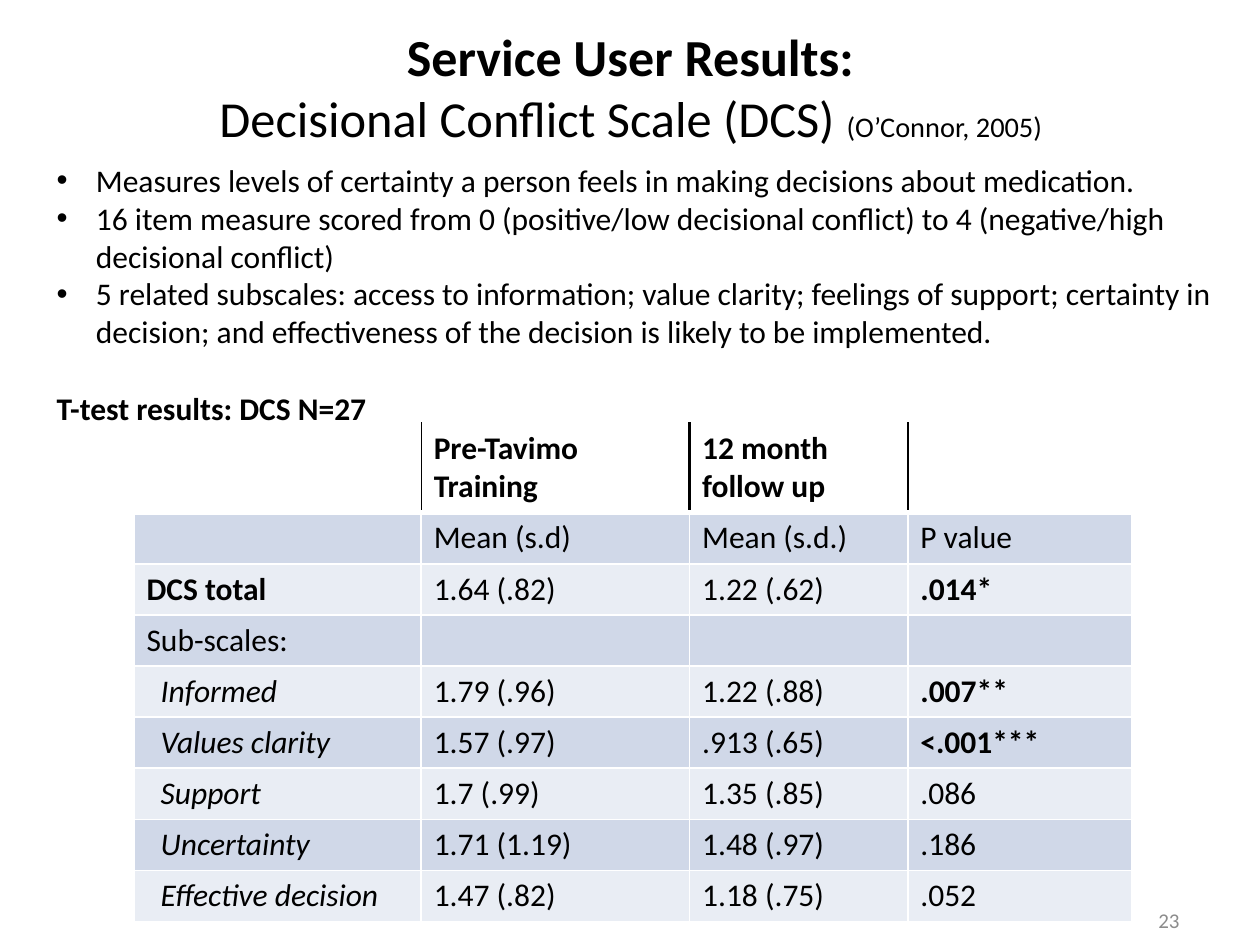
import pptx
import pptx.dml.color
import pptx.enum.text
import pptx.oxml
import pptx.oxml.ns
import pptx.util

Cm, Pt = pptx.util.Cm, pptx.util.Pt
RGB = pptx.dml.color.RGBColor.from_string
ALIGN = pptx.enum.text.PP_ALIGN
ANCHOR = pptx.enum.text.MSO_ANCHOR

# Content
TITLE = [
    [("Service User Results:", "title", True)],
    [("Decisional Conflict Scale (DCS) ", "subtitle", False),
     ("(O’Connor, 2005)", "cite", False)],
]
BULLETS = [
    "Measures levels of certainty a person feels in making decisions about medication.",
    "16 item measure scored from 0 (positive/low decisional conflict) to 4 "
    "(negative/high decisional conflict)",
    "5 related subscales: access to information; value clarity; feelings of support; "
    "certainty in decision; and effectiveness of the decision is likely to be implemented.",
]
TABLE_HEADING = "T-test results: DCS N=27"
ROWS = [
    ("", "Pre-Tavimo Training", "12 month follow up", ""),
    ("", "Mean (s.d)", "Mean (s.d.)", "P value"),
    ("DCS total", "1.64 (.82)", "1.22 (.62)", ".014*"),
    ("Sub-scales:", "", "", ""),
    ("Informed", "1.79 (.96)", "1.22 (.88)", ".007**"),
    ("Values clarity", "1.57 (.97)", ".913 (.65)", "<.001***"),
    ("Support", "1.7 (.99)", "1.35 (.85)", ".086"),
    ("Uncertainty", "1.71 (1.19)", "1.48 (.97)", ".186"),
    ("Effective decision", "1.47 (.82)", "1.18 (.75)", ".052"),
]
FIRST_SUBSCALE = 4
PAGE = "23"

THEME = {
    "font": "Calibri",
    "size": {"title": 29.7, "subtitle": 28.8, "cite": 16.2, "body": 18, "page": 12},
    "text": "000000", "muted": "8C8C8C", "white": "FFFFFF",
    "bands": ("D0D8E8", "E9EDF4"),
}

# Layout in centimetres
TITLE_BOX = (0.51, 0.76, 24.41, 1.96)
BODY_BOX = (0.89, 3.12, 24, 5.64)
PAGE_BOX = (18.11, 18.03, 5.92, 1.02)
TABLE_AT = (2.7, 8.53)
COLUMNS = (5.79, 5.41, 4.4, 4.52)
HEADER_HEIGHT, ROW_HEIGHT = 1.79, 1.03
BULLET_INDENT, SUBSCALE_MARGIN = 0.79, 0.54


def style(r, size="body", color="text", bold=False, italic=False):
    r.font.name = THEME["font"]
    r.font.size = Pt(THEME["size"][size])
    r.font.color.rgb = RGB(THEME[color])
    r.font.bold, r.font.italic = bold, italic


def place(sp, box, anchor):
    sp.left, sp.top, sp.width, sp.height = map(Cm, box)
    tf = sp.text_frame
    tf.word_wrap = True
    tf.auto_size = pptx.enum.text.MSO_AUTO_SIZE.NONE
    tf.vertical_anchor = anchor
    return tf


def set_bullet(p, char=None):
    pPr = p._p.get_or_add_pPr()
    indent = Cm(BULLET_INDENT) if char else 0
    pPr.set("marL", str(indent))
    pPr.set("indent", str(-indent))
    tag = f'buChar char="{char}"' if char else "buNone"
    pPr.append(pptx.oxml.parse_xml(f'<a:{tag} {pptx.oxml.ns.nsdecls("a")}/>'))


def border(cell, side, color, width):
    cell._tc.get_or_add_tcPr().append(pptx.oxml.parse_xml(
        f'<a:ln{side} {pptx.oxml.ns.nsdecls("a")} w="{Pt(width)}"><a:solidFill>'
        f'<a:srgbClr val="{THEME[color]}"/></a:solidFill></a:ln{side}>'))


def cell_borders(row, col):
    """Header cells are split by black rules; all other borders are white."""
    sides = {side: ("white", 1) for side in "LRTB"}
    if row == 0:
        sides["B"] = ("white", 3)
        if col > 0:
            sides["L"] = ("text", 0.25 if col == 1 else 1.5)
        if col < len(COLUMNS) - 1:
            sides["R"] = ("text", 0.25 if col == 0 else 1.5)
    elif row == 1:
        sides["T"] = ("white", 3)
    return sides


prs = pptx.Presentation()
prs.slide_width, prs.slide_height = Cm(25.4), Cm(19.05)
s = prs.slides.add_slide(prs.slide_layouts[1])

# Title
tf = place(s.shapes.title, TITLE_BOX, ANCHOR.MIDDLE)
for i, line in enumerate(TITLE):
    p = tf.add_paragraph() if i else tf.paragraphs[0]
    p.alignment = ALIGN.CENTER
    for text, size, bold in line:
        r = p.add_run()
        r.text = text
        style(r, size, bold=bold)

# Results table
table = s.shapes.add_table(
    len(ROWS), len(COLUMNS), *map(Cm, TABLE_AT), Cm(sum(COLUMNS)),
    Cm(HEADER_HEIGHT + ROW_HEIGHT * (len(ROWS) - 1))).table
table.first_row = table.horz_banding = False
for col, width in enumerate(COLUMNS):
    table.columns[col].width = Cm(width)
for row, values in enumerate(ROWS):
    table.rows[row].height = Cm(ROW_HEIGHT if row else HEADER_HEIGHT)
    fill = THEME["bands"][(row - 1) % 2] if row else THEME["white"]
    for col, text in enumerate(values):
        cell = table.cell(row, col)
        for side, line in cell_borders(row, col).items():
            border(cell, side, *line)
        cell.fill.solid()
        cell.fill.fore_color.rgb = RGB(fill)
        subscale = col == 0 and row >= FIRST_SUBSCALE
        if subscale:
            cell.margin_left = Cm(SUBSCALE_MARGIN)
        cell.text_frame.text = text
        for r in cell.text_frame.paragraphs[0].runs:
            bold = row == 0 or text == "DCS total" or text.endswith("*")
            style(r, bold=bold, italic=subscale)

# Bullets and table heading
tf = place(s.placeholders[1], BODY_BOX, ANCHOR.TOP)
tf.text = "\n".join(BULLETS + [TABLE_HEADING])
for p in tf.paragraphs:
    heading = p.text == TABLE_HEADING
    p.space_before = Pt(22 if heading else 0)
    set_bullet(p, None if heading else "•")
    style(p.runs[0], bold=heading)

# Page number
tf = place(s.shapes.add_textbox(0, 0, 0, 0), PAGE_BOX, ANCHOR.MIDDLE)
tf.text = PAGE
tf.paragraphs[0].alignment = ALIGN.RIGHT
style(tf.paragraphs[0].runs[0], "page", "muted")

prs.save("out.pptx")
